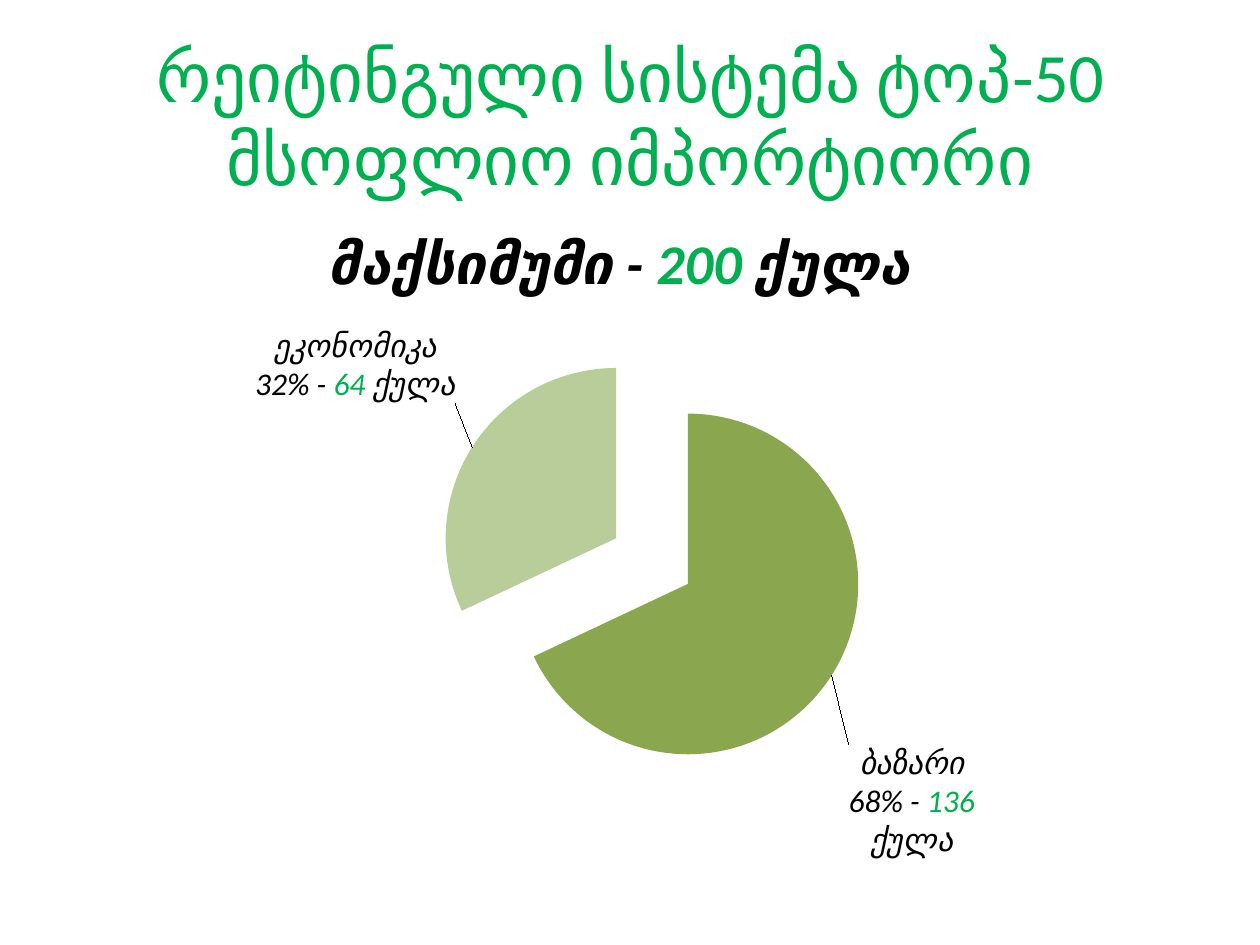
import dataclasses
import pptx
import pptx.chart.data
import pptx.dml.color
import pptx.enum.chart
import pptx.enum.text
import pptx.oxml
import pptx.oxml.ns
import pptx.util
from pptx.util import Inches


@dataclasses.dataclass(frozen=True)
class Theme:
    font: str = "Calibri"
    ink: str = "000000"
    green: str = "00B050"
    dark: str = "8AA64F"
    light: str = "B9CD9A"
    head: float = 39.6
    sub: float = 32
    label: float = 18


THEME = Theme()


def tint(code):
    return pptx.dml.color.RGBColor.from_string(code)


def write(frame, text, size, color=THEME.ink, mark="", bold=False, italic=False):
    for row, line in enumerate(text.split("\n")):
        para = frame.add_paragraph() if row else frame.paragraphs[0]
        para.alignment = pptx.enum.text.PP_ALIGN.CENTER
        parts = line.partition(mark) if mark else (line,)
        for part in filter(None, parts):
            run = para.add_run()
            run.text = part
            font = run.font
            font.name, font.size = THEME.font, pptx.util.Pt(size)
            font.bold, font.italic = bold, italic
            font.color.rgb = tint(THEME.green if part == mark else color)


def node(tag, body):
    space = pptx.oxml.ns.nsdecls("c")
    return pptx.oxml.parse_xml(f"<c:{tag} {space}{body}")


def layout(x, y, w=None, h=None):
    sides = {"x": x, "y": y, "w": w, "h": h}
    body = "".join(f'<c:{k} val="{v}"/>' for k, v in sides.items() if v is not None)
    modes = ""
    if w is not None:
        modes = '<c:layoutTarget val="inner"/><c:xMode val="edge"/><c:yMode val="edge"/>'
    return node("layout", f"><c:manualLayout>{modes}{body}</c:manualLayout></c:layout>")


def heading(slide, left, top, width, height):
    title = slide.shapes.title
    title.left, title.top = left, top
    title.width, title.height = width, height
    frame = title.text_frame
    frame.word_wrap = True
    frame.vertical_anchor = pptx.enum.text.MSO_ANCHOR.MIDDLE
    write(frame, "რეიტინგული სისტემა ტოპ-50 მსოფლიო იმპორტიორი",
          size=THEME.head, color=THEME.green)


def pie(slide, left, top, width, height):
    data = pptx.chart.data.CategoryChartData()
    data.categories = ["Market", "Economy"]
    data.add_series("Series 1", (68, 32))
    kind = pptx.enum.chart.XL_CHART_TYPE.PIE
    chart = slide.shapes.add_chart(kind, left, top, width, height, data).chart
    chart.has_legend = False
    chart.font.name, chart.font.size = THEME.font, pptx.util.Pt(THEME.label)
    chart.font.color.rgb = tint(THEME.ink)
    chart.has_title = True
    chart.chart_title.include_in_layout = False
    write(chart.chart_title.text_frame, "მაქსიმუმი - 200 ქულა",
          size=THEME.sub, mark="200", bold=True, italic=True)

    plot = chart.plots[0]
    plot.vary_by_categories = False
    series = plot.series[0]
    labels = series.data_labels
    labels.show_value = False
    labels.show_percentage = labels.show_category_name = True
    labels.number_format, labels.number_format_is_linked = "0%", False
    spot = pptx.enum.chart.XL_LABEL_POSITION.OUTSIDE_END
    labels.position = spot

    slices = [
        (THEME.dark, "ბაზარი\n68% - 136 ქულა", "136", 0.01, 0.1),
        (THEME.light, "ეკონომიკა\n32% - 64 ქულა", "64", -0.01, -0.06),
    ]
    for index, (color, text, mark, x, y) in enumerate(slices):
        point = series.points[index]
        point.format.fill.solid()
        point.format.fill.fore_color.rgb = tint(color)
        point.format.line.fill.background()
        label = point.data_label
        write(label.text_frame, text, size=THEME.label, mark=mark, italic=True)
        label.position = spot
        mine = series._element.xpath(f'c:dLbls/c:dLbl[c:idx/@val="{index}"]')[0]
        mine.xpath("c:idx")[0].addnext(layout(x, y))

    series._element.xpath("c:dPt")[0].addprevious(node("explosion", ' val="25"/>'))
    area = chart._chartSpace.xpath("c:chart/c:plotArea")[0]
    for old in area.xpath("c:layout"):
        area.remove(old)
    area.insert(0, layout(0.33, 0.22, 0.4, 0.65))


def main():
    deck = pptx.Presentation()
    deck.slide_width, deck.slide_height = Inches(10), Inches(7.5)
    slide = deck.slides.add_slide(deck.slide_layouts.get_by_name("Title Only"))
    heading(slide, Inches(0.5), Inches(0.3), Inches(9), Inches(1.25))
    pie(slide, Inches(0.67), Inches(1.62), Inches(8.5), Inches(5.2))
    deck.save("out.pptx")


if __name__ == "__main__":
    main()
